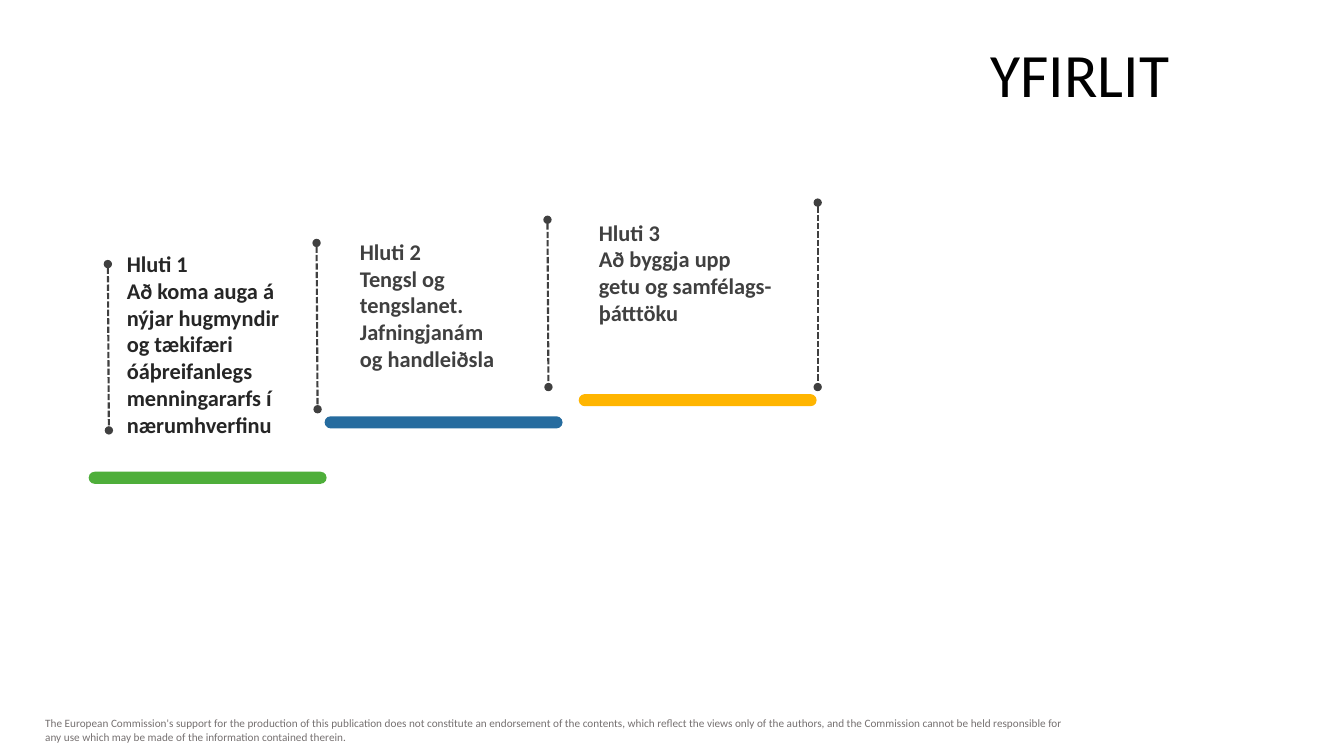
"""Builds the YFIRLIT overview slide with three stepped parts."""
from lxml.etree import SubElement
from pptx import Presentation
from pptx.dml.color import RGBColor
from pptx.enum.dml import MSO_LINE
from pptx.enum.shapes import MSO_CONNECTOR, MSO_SHAPE
from pptx.enum.text import MSO_ANCHOR, PP_ALIGN
from pptx.oxml.ns import qn
from pptx.util import Inches, Pt

BLACK = RGBColor(0x00, 0x00, 0x00)
INK = RGBColor(0x26, 0x26, 0x26)
CHARCOAL = RGBColor(0x40, 0x40, 0x40)
GREY = RGBColor(0x76, 0x71, 0x71)
GREEN = RGBColor(0x4E, 0xAE, 0x3A)
BLUE = RGBColor(0x26, 0x6C, 0x9F)
YELLOW = RGBColor(0xFF, 0xB5, 0x00)

PARTS = [
    ("Hluti 1", "Að koma auga á nýjar hugmyndir og tækifæri óáþreifanlegs menningararfs í nærumhverfinu",
     INK, (1.16, 2.43, 1.93, 1.99), 0.1, GREEN, (0.88, 4.68)),
    ("Hluti 2", "Tengsl og tengslanet. Jafningjanám og handleiðsla",
     CHARCOAL, (3.45, 2.31, 1.64, 1.45), 0.12, BLUE, (3.22, 4.13)),
    ("Hluti 3", "Að byggja upp getu og samfélags-þátttöku",
     CHARCOAL, (5.82, 2.12, 1.97, 1.18), 0.12, YELLOW, (5.74, 3.91)),
]
DIVIDERS = [
    (1.07, 2.62, 1.08, 4.27),
    (3.14, 2.41, 3.15, 4.06),
    (5.43, 2.18, 5.44, 3.84),
    (8.11, 2.01, 8.11, 3.84),
]
DISCLAIMER = (
    "The European Commission's support for the production of this publication does not constitute "
    "an endorsement of the contents, which reflect the views only of the authors, and the Commission "
    "cannot be held responsible for any use which may be made of the information contained therein."
)


class OverviewPage:
    """Holds the style and the current slide."""

    font = "Calibri"

    def __init__(self, deck):
        self.page = deck.slides.add_slide(deck.slide_layouts[5])

    def add_span(self, para, text, size, color, bold=False):
        span = para.add_run()
        span.text = text
        span.font.name = self.font
        span.font.size = Pt(size)
        span.font.bold = bold
        span.font.color.rgb = color

    def title(self, text, left, top, width, height):
        box = self.page.shapes.title
        box.left, box.top = Inches(left), Inches(top)
        box.width, box.height = Inches(width), Inches(height)
        box.text_frame.vertical_anchor = MSO_ANCHOR.MIDDLE
        para = box.text_frame.paragraphs[0]
        para.alignment = PP_ALIGN.RIGHT
        para.line_spacing = 0.9
        self.add_span(para, text, 44, BLACK)

    def text(self, lines, area, size, color, bold=False, inset=0.1):
        frame = self.page.shapes.add_textbox(*map(Inches, area)).text_frame
        frame.word_wrap = True
        frame.margin_left = frame.margin_right = Inches(inset)
        for index, line in enumerate(lines):
            para = frame.add_paragraph() if index else frame.paragraphs[0]
            self.add_span(para, line, size, color, bold)

    def bar(self, left, top, color):
        bar = self.page.shapes.add_shape(
            MSO_SHAPE.ROUNDED_RECTANGLE, Inches(left), Inches(top), Inches(2.36), Inches(0.12))
        bar.adjustments[0] = 0.5
        bar.shadow.inherit = False
        bar.fill.solid()
        bar.fill.fore_color.rgb = color
        bar.line.fill.background()

    def divider(self, ends):
        divider = self.page.shapes.add_connector(MSO_CONNECTOR.STRAIGHT, *map(Inches, ends))
        divider.line.color.rgb = CHARCOAL
        divider.line.width = Pt(1.5)
        divider.line.dash_style = MSO_LINE.SQUARE_DOT
        properties = divider.element.spPr
        outline = properties.find(qn("a:ln"))
        for end in ("a:headEnd", "a:tailEnd"):
            SubElement(outline, qn(end), type="oval")
        SubElement(properties, qn("a:effectLst"))


def main():
    deck = Presentation()
    deck.slide_width, deck.slide_height = Inches(13.33), Inches(7.5)
    overview = OverviewPage(deck)
    overview.text([DISCLAIMER], (0.35, 7.06, 10.46, 0.37), 8, GREY)
    overview.title("YFIRLIT", 3.09, 0.37, 8.61, 0.79)
    for heading, topic, ink, area, inset, color, corner in PARTS:
        overview.bar(*corner, color)
        overview.text([heading, topic], area, 16, ink, bold=True, inset=inset)
    for ends in DIVIDERS:
        overview.divider(ends)
    deck.save("out.pptx")


if __name__ == "__main__":
    main()
